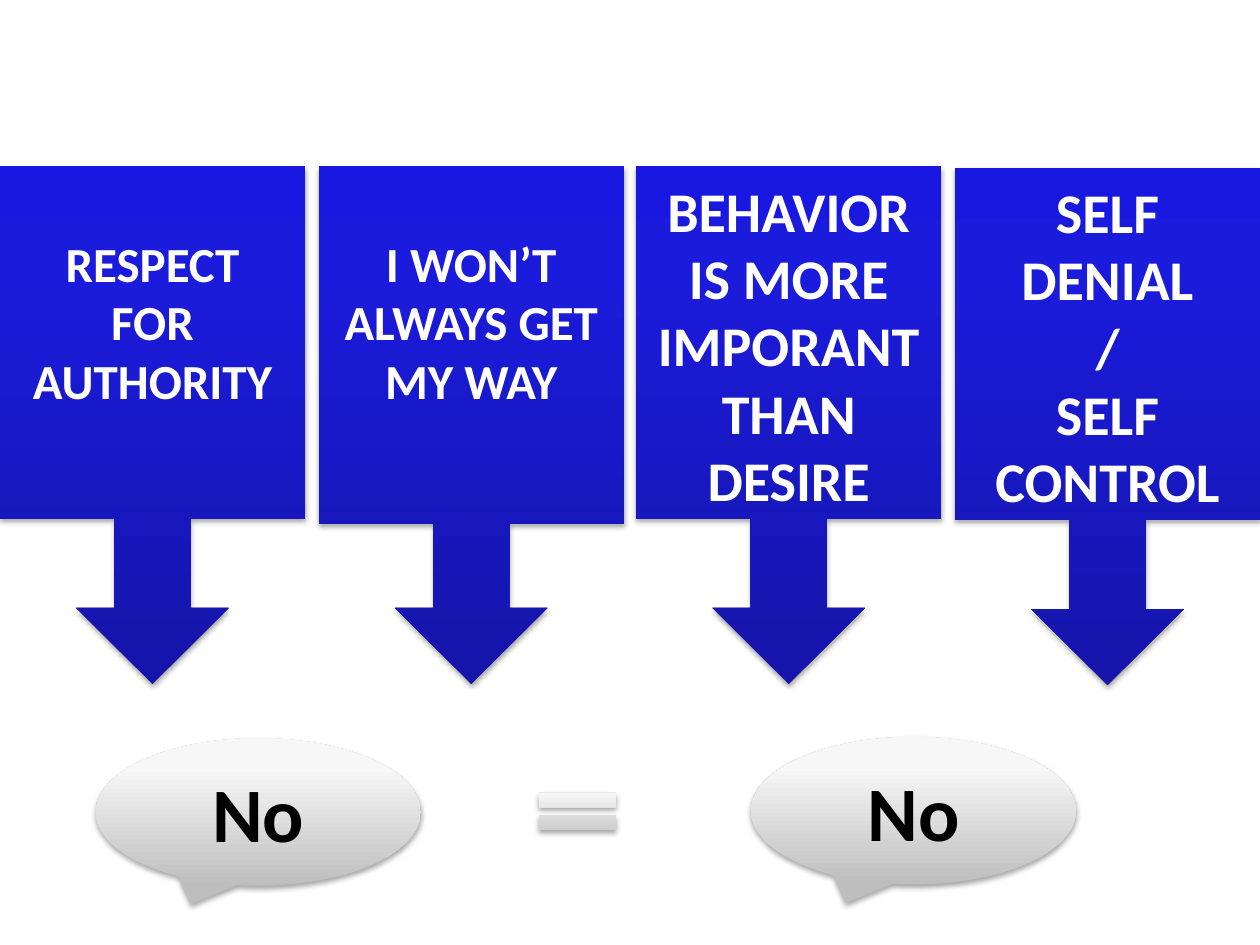
import copy
import pptx
import pptx.dml.color
import pptx.enum.shapes
import pptx.enum.text
import pptx.oxml
import pptx.oxml.ns
import pptx.util

Inches = pptx.util.Inches
SHAPES = pptx.enum.shapes.MSO_SHAPE
COLORS = {"white": "FFFFFF", "black": "000000"}
# Gradient stops from bottom to top: position, colour
BLUE = [(0, "1515A9"), (0.8, "1B1BDC"), (1, "1818E1")]
SILVER = [(0, "BEBEBE"), (0.8, "F7F7F7"), (1, "F8F8F8")]

# Lessons: paragraphs, size, top, box share of height, top inset
LESSONS = [
    (["RESPECT", "FOR\vAUTHORITY"], 28, 1.32, 0.68, 0.53),
    (["I WON’T ALWAYS GET MY WAY"], 28, 1.32, 0.69, 0.53),
    (["BEHAVIOR\vIS MORE IMPORANT THAN DESIRE"], 32, 1.32, 0.68, 0.08),
    (["SELF\vDENIAL", "/\vSELF\vCONTROL"], 32, 1.33, 0.68, 0.08),
]
LESSON_WIDTH, LESSON_HEIGHT = 2.42, 4.11
ANSWERS = [("No", 0.76, 5.86), ("No", 5.96, 5.85)]

SHADOW = (
    '<a:outerShdw xmlns:a="http://schemas.openxmlformats.org/drawingml/2006/main" '
    'blurRad="39370" dist="22860" dir="5400000" rotWithShape="0">'
    '<a:srgbClr val="000000"><a:alpha val="35000"/></a:srgbClr></a:outerShdw>'
)


def add_glossy(slide, kind, left, top, width, height, gradient):
    """Add a borderless shape with a vertical gradient and a soft shadow."""
    shape = slide.shapes.add_shape(
        kind, Inches(left), Inches(top), Inches(width), Inches(height))
    shape.line.fill.background()
    shape.fill.gradient()
    shape.fill.gradient_angle = 90
    stop_list = shape._element.spPr.find(".//" + pptx.oxml.ns.qn("a:gsLst"))
    stop_list.append(copy.deepcopy(stop_list[0]))
    for stop, (position, color) in zip(shape.fill.gradient_stops, gradient):
        stop.position = position
        stop.color.rgb = pptx.dml.color.RGBColor.from_string(color)
    shape.shadow.inherit = False
    effects = shape._element.spPr.find(pptx.oxml.ns.qn("a:effectLst"))
    effects.append(pptx.oxml.parse_xml(SHADOW))
    return shape


def write(shape, paragraphs, size, color):
    frame = shape.text_frame
    frame.word_wrap = True
    frame.text = "\n".join(paragraphs)
    for paragraph in frame.paragraphs:
        paragraph.alignment = pptx.enum.text.PP_ALIGN.CENTER
        paragraph.font.name = "Calibri"
        paragraph.font.size = pptx.util.Pt(size)
        paragraph.font.bold = True
        paragraph.font.color.rgb = pptx.dml.color.RGBColor.from_string(COLORS[color])


def main():
    deck = pptx.Presentation()
    deck.slide_width, deck.slide_height = Inches(10), Inches(7.5)
    slide = deck.slides.add_slide(deck.slide_layouts[6])

    # Lesson arrows, spread evenly over the slide width
    step = (10 - LESSON_WIDTH) / (len(LESSONS) - 1)
    for column, (paragraphs, size, top, share, inset) in enumerate(LESSONS):
        lesson = add_glossy(slide, SHAPES.DOWN_ARROW_CALLOUT, round(column * step, 2),
                            top, LESSON_WIDTH, LESSON_HEIGHT, BLUE)
        for index, value in enumerate((0.25, 0.25, 0.25, share)):
            lesson.adjustments[index] = value
        write(lesson, paragraphs, size, "white")
        lesson.text_frame.vertical_anchor = pptx.enum.text.MSO_ANCHOR.TOP
        lesson.text_frame.margin_top = Inches(inset)

    # Answer bubbles with the equal sign between them
    for answer, left, top in ANSWERS:
        bubble = add_glossy(slide, SHAPES.OVAL_CALLOUT, left, top, 2.58, 1.17, SILVER)
        write(bubble, [answer], 44, "black")
        bubble.text_frame.vertical_anchor = pptx.enum.text.MSO_ANCHOR.MIDDLE
    add_glossy(slide, SHAPES.MATH_EQUAL, 4.17, 6.19, 0.83, 0.5, SILVER)

    deck.save("out.pptx")


if __name__ == "__main__":
    main()
